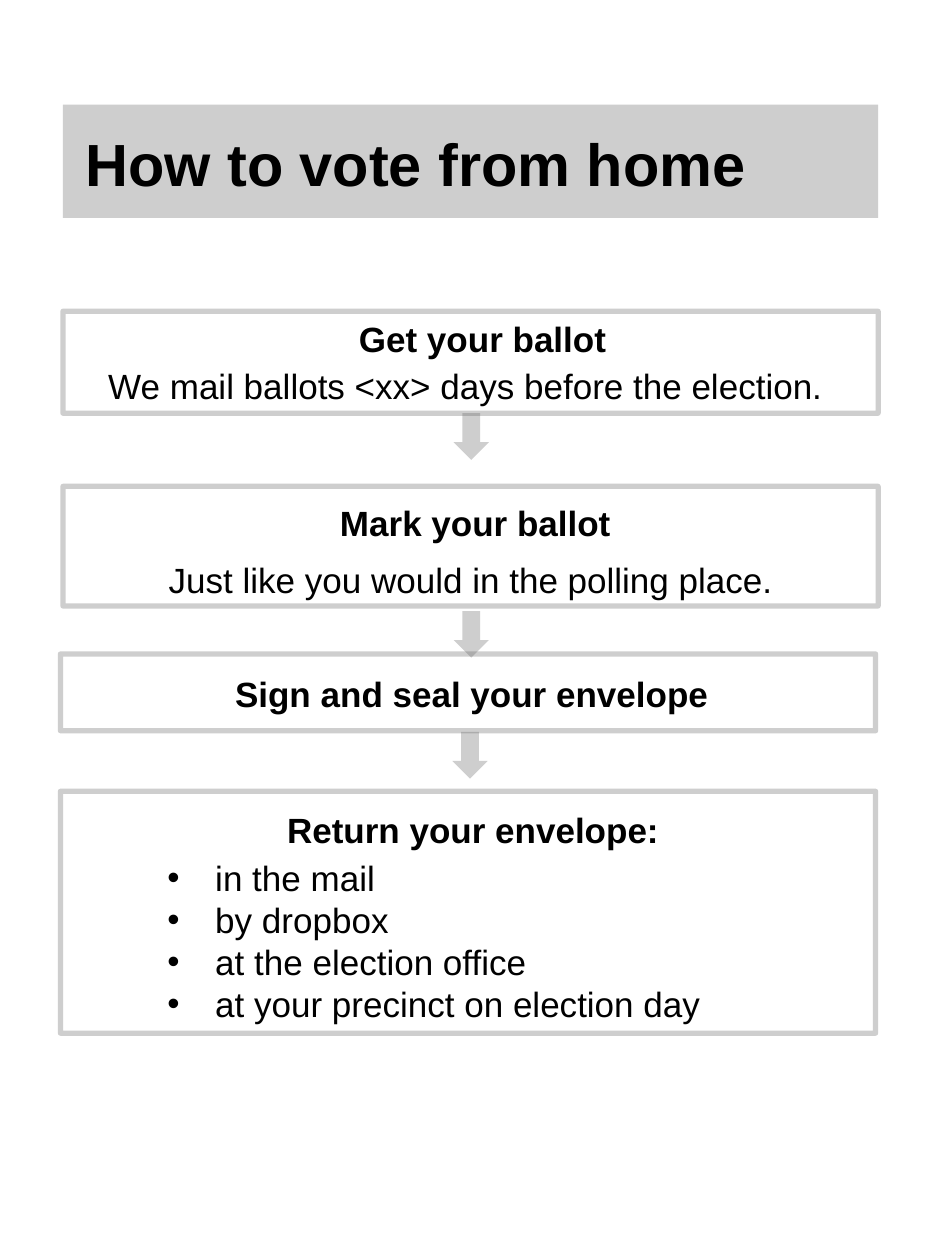
from dataclasses import dataclass
from lxml.etree import SubElement
from pptx import Presentation
from pptx.dml.color import RGBColor
from pptx.enum.shapes import MSO_SHAPE
from pptx.enum.text import PP_ALIGN
from pptx.oxml.ns import qn
from pptx.util import Inches, Pt

COLOURS = {"grey": "5F5F5F", "text": "000000"}


@dataclass
class Flyer:
    """Draws the elements of a voting flyer in one style."""

    slide: object
    font: str = "Arial"
    size: int = 20
    opacity: int = 30

    def tint(self, fill):
        fill.solid()
        fill.fore_color.rgb = RGBColor.from_string(COLOURS["grey"])
        colour = fill._xPr.find(qn("a:solidFill"))[0]
        SubElement(colour, qn("a:alpha"), val=str(self.opacity * 1000))

    def shape(self, kind, left, top, width, height):
        shape = self.slide.shapes.add_shape(
            kind, Inches(left), Inches(top), Inches(width), Inches(height))
        shape.shadow.inherit = False
        return shape

    def solid(self, kind, left, top, width, height):
        shape = self.shape(kind, left, top, width, height)
        self.tint(shape.fill)
        shape.line.fill.background()

    def frame(self, left, top, width, height):
        shape = self.shape(MSO_SHAPE.RECTANGLE, left, top, width, height)
        shape.fill.background()
        shape.line.width = Pt(3)
        self.tint(shape.line.fill)

    def arrow(self, left, top):
        self.solid(MSO_SHAPE.DOWN_ARROW, left, top, 0.28, 0.37)

    def text(self, lines, left, top, width, height=0.44, size=None,
             bold=False, align=PP_ALIGN.LEFT, bullets=False):
        box = self.slide.shapes.add_textbox(
            Inches(left), Inches(top), Inches(width), Inches(height))
        frame = box.text_frame
        frame.word_wrap = True
        for index, line in enumerate(lines):
            para = frame.add_paragraph() if index else frame.paragraphs[0]
            para.alignment = align
            if bullets:
                self.bullet(para)
            span = para.add_run()
            span.text = line
            span.font.name = self.font
            span.font.size = Pt(size or self.size)
            span.font.bold = bold
            span.font.color.rgb = RGBColor.from_string(COLOURS["text"])

    def bullet(self, para):
        properties = para._p.get_or_add_pPr()
        properties.set("marL", str(Inches(0.38)))
        properties.set("indent", str(-Inches(0.38)))
        SubElement(properties, qn("a:buFont"), typeface=self.font)
        SubElement(properties, qn("a:buChar"), char="•")


def main():
    deck = Presentation()
    deck.slide_width, deck.slide_height = Inches(7.5), Inches(10)
    page = Flyer(deck.slides.add_slide(deck.slide_layouts[6]))

    page.solid(MSO_SHAPE.RECTANGLE, 0.5, 0.83, 6.47, 0.9)
    page.text(["How to vote from home"], 0.58, 0.96, 6.37, 0.67, size=34, bold=True)

    for left, top, height in ((0.5, 2.47, 0.81), (0.5, 3.86, 0.95),
                              (0.48, 5.19, 0.61), (0.48, 6.28, 1.92)):
        page.frame(left, top, 6.47, height)
    for left, top in ((3.6, 3.28), (3.6, 4.85), (3.59, 5.81)):
        page.arrow(left, top)

    for heading, left, top, width, align in (
            ("Get your ballot", 2.75, 2.47, 2.32, PP_ALIGN.LEFT),
            ("Mark your ballot", 2.6, 3.93, 2.43, PP_ALIGN.LEFT),
            ("Sign and seal your envelope", 1.11, 5.29, 5.27, PP_ALIGN.CENTER),
            ("Return your envelope:", 1.48, 6.37, 4.55, PP_ALIGN.CENTER)):
        page.text([heading], left, top, width, bold=True, align=align)

    page.text(["We mail ballots <xx> days before the election."], 0.76, 2.84, 5.92)
    page.text(["Just like you would in the polling place."], 1.24, 4.38, 5.72)
    page.text(["in the mail", "by dropbox", "at the election office",
               "at your precinct on election day"],
              1.23, 6.75, 5.72, 1.45, bullets=True)
    deck.save("out.pptx")


if __name__ == "__main__":
    main()
